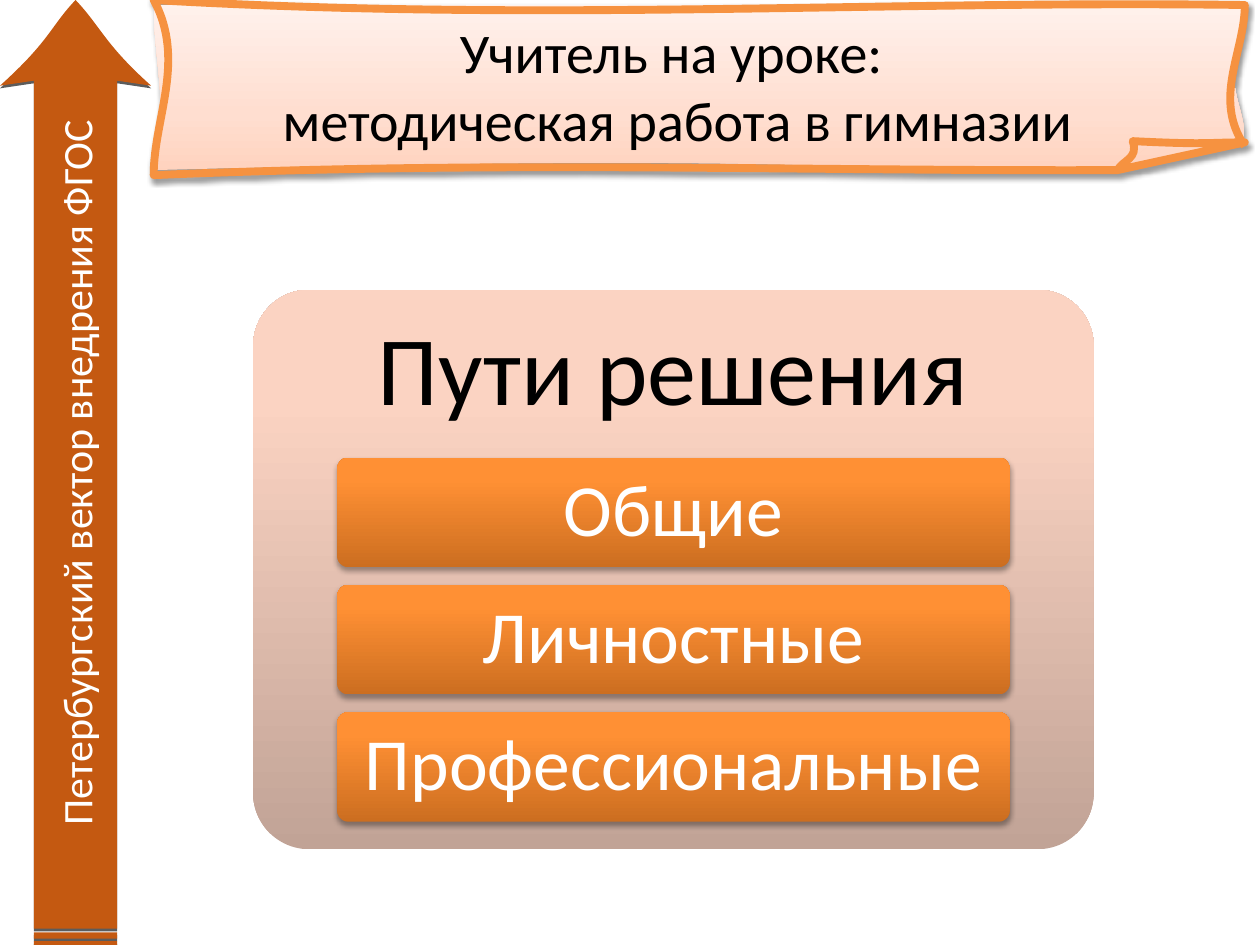
from copy import deepcopy

from lxml import etree
from pptx import Presentation
from pptx.dml.color import RGBColor
from pptx.enum.shapes import MSO_SHAPE
from pptx.enum.text import MSO_ANCHOR, MSO_AUTO_SIZE, PP_ALIGN
from pptx.oxml.ns import qn
from pptx.util import Inches, Pt

CENTER, MIDDLE, NO_FIT = PP_ALIGN.CENTER, MSO_ANCHOR.MIDDLE, MSO_AUTO_SIZE.NONE
ROUND = MSO_SHAPE.ROUNDED_RECTANGLE
BLACK = RGBColor(0x00, 0x00, 0x00)
WHITE = RGBColor(0xFF, 0xFF, 0xFF)
RUST = RGBColor(0xC4, 0x59, 0x11)
EDGE = RGBColor(0xF6, 0x92, 0x40)
PAPER = [(0, RGBColor(0xFF, 0xD2, 0xBD)), (0.35, RGBColor(0xFF, 0xDE, 0xD0)),
         (1, RGBColor(0xFF, 0xF2, 0xED))]
SAND = [(0, RGBColor(0xC1, 0xA3, 0x96)), (0.8, RGBColor(0xFB, 0xD3, 0xC2)),
        (1, RGBColor(0xFD, 0xD4, 0xC2))]
AMBER = [(0, RGBColor(0xCC, 0x6E, 0x20)), (0.8, RGBColor(0xFF, 0x90, 0x34)),
         (1, RGBColor(0xFF, 0x91, 0x36))]
W, H = 10, 7.5


def write(shape, text, size, color=BLACK, pad=(0.1, 0.05), spacing=1.0):
    frame = shape.text_frame
    frame.word_wrap = True
    frame.auto_size = NO_FIT
    frame.vertical_anchor = MIDDLE
    frame.margin_left = frame.margin_right = Inches(pad[0])
    frame.margin_top = frame.margin_bottom = Inches(pad[1])
    frame.text = text
    par = frame.paragraphs[0]
    par.alignment = CENTER
    par.line_spacing = spacing
    for run in par.runs:
        run.font.name = "Calibri"
        run.font.size = Pt(size)
        run.font.color.rgb = color


def paint(shape, fill, line=None, shadow=None):
    """Fill is a colour or gradient stops; shadow is opacity %, blur, distance."""
    if isinstance(fill, RGBColor):
        shape.fill.solid()
        shape.fill.fore_color.rgb = fill
    else:
        shape.fill.gradient()
        shape.fill.gradient_angle = 90
        stops = shape._element.spPr.find(".//" + qn("a:gsLst"))
        stops.append(deepcopy(stops[0]))
        for stop, (place, color) in zip(shape.fill.gradient_stops, fill):
            stop.position = place
            stop.color.rgb = color
    if line is None:
        shape.line.fill.background()
    else:
        shape.line.color.rgb = line
        shape.line.width = Pt(4.5)
    shape.shadow.inherit = False
    if shadow:
        alpha, blur, dist = shadow
        effects = shape._element.spPr.find(qn("a:effectLst"))
        outer = etree.SubElement(
            effects, qn("a:outerShdw"), blurRad=str(Pt(blur)), dist=str(Pt(dist)),
            dir="5400000", rotWithShape="0")
        tint = etree.SubElement(outer, qn("a:srgbClr"), val="000000")
        etree.SubElement(tint, qn("a:alpha"), val=str(alpha * 1000))


deck = Presentation()
deck.slide_width, deck.slide_height = Inches(W), Inches(H)
slide = deck.slides.add_slide(deck.slide_layouts[5])
shapes = slide.shapes

# Outlines are in hundredths of an inch from the shape's corner.
# Each step has 2 numbers for a corner, 6 for a Bézier curve.
# The arrow lies along x with its tip at the right, then turns upright.
ARROW = [({}, [
    [(0, 27), (3, 27), (3, 93), (0, 93)],
    [(5, 27), (10, 27), (10, 93), (5, 93)],
    [(13, 27), (686, 27), (682, 0), (718, 40, 729, 40, 750, 60),
     (729, 80, 715, 83, 682, 120), (686, 93), (13, 93)],
])]
SCROLL = [
    ({"stroke": "0"}, [
        [(0, 4), (866, 4), (846, 75, 866, 77, 866, 113), (804, 121, 825, 127, 765, 135),
         (510, 135, 500, 122, 0, 135), (13, 90, 0, 48, 0, 4)]]),
    ({"stroke": "0"}, [[(765, 135), (795, 112), (866, 113), (765, 135)]]),
    ({"fill": "none"}, [
        [(765, 135), (769, 127, 782, 126, 777, 112), (837, 115, 836, 113, 866, 113),
         (765, 135), (510, 136, 277, 127, 0, 139), (0, 94, 26, 48, 0, 0),
         (309, 18, 577, 0, 866, 4), (866, 41, 840, 78, 866, 116)]]),
]

made = []
for layers, wide, tall in ((ARROW, 750, 120), (SCROLL, 866, 139)):
    pen = shapes.build_freeform(0, 0, scale=Inches(0.01))
    pen.add_line_segments([(wide, 0), (wide, tall), (0, tall)])
    shape = pen.convert_to_shape()
    paths = shape._element.spPr.find(".//" + qn("a:pathLst"))
    blank = paths[0]
    paths.remove(blank)
    for child in list(blank):
        blank.remove(child)
    for flags, contours in layers:
        track = deepcopy(blank)
        paths.append(track)
        for key, value in flags.items():
            track.set(key, value)
        for steps in contours:
            for count, step in enumerate(steps):
                kind = "cubicBezTo" if len(step) == 6 else "lnTo" if count else "moveTo"
                move = etree.SubElement(track, qn("a:" + kind))
                for x, y in zip(step[::2], step[1::2]):
                    etree.SubElement(move, qn("a:pt"), x=str(x), y=str(y))
            if "fill" not in flags:
                etree.SubElement(track, qn("a:close"))
    made.append(shape)
arrow, scroll = made

arrow.left, arrow.top = Inches((1.2 - H) / 2), Inches((H - 1.2) / 2)
arrow.rotation = 270
paint(arrow, RUST, shadow=(63, 0, 1.5))
write(arrow, "Петербургский вектор внедрения ФГОС", 24, WHITE)
scroll.left = Inches(1.22)
paint(scroll, PAPER, line=EDGE, shadow=(38, 3.1, 1.6))

title = shapes.title
title.left, title.top = Inches(0.88), Inches(0.05)
title.width, title.height = Inches(9), Inches(1.25)
write(title, "Учитель на уроке: \vметодическая работа в гимназии", 32)
shapes._spTree.append(title._element)

left, top, wide, tall = 2.01, 2.3, 6.67, 4.44
head = 0.3 * tall
panel = shapes.add_shape(ROUND, Inches(left), Inches(top), Inches(wide), Inches(tall))
panel.adjustments[0] = 0.1
paint(panel, SAND)
label = shapes.add_textbox(Inches(left), Inches(top), Inches(wide), Inches(head))
write(label, "Пути решения", 56, pad=(0.23, 0.23), spacing=0.9)

for row, name in enumerate(("Общие", "Личностные", "Профессиональные")):
    bar = shapes.add_shape(ROUND, Inches(left + 0.1 * wide), Inches(top + head + 1.01 * row),
                           Inches(0.8 * wide), Inches(0.87))
    bar.adjustments[0] = 0.1
    paint(bar, AMBER, shadow=(35, 3.1, 1.8))
    write(bar, name, 42, WHITE, pad=(0.12, 0.09), spacing=0.9)

deck.save("out.pptx")
